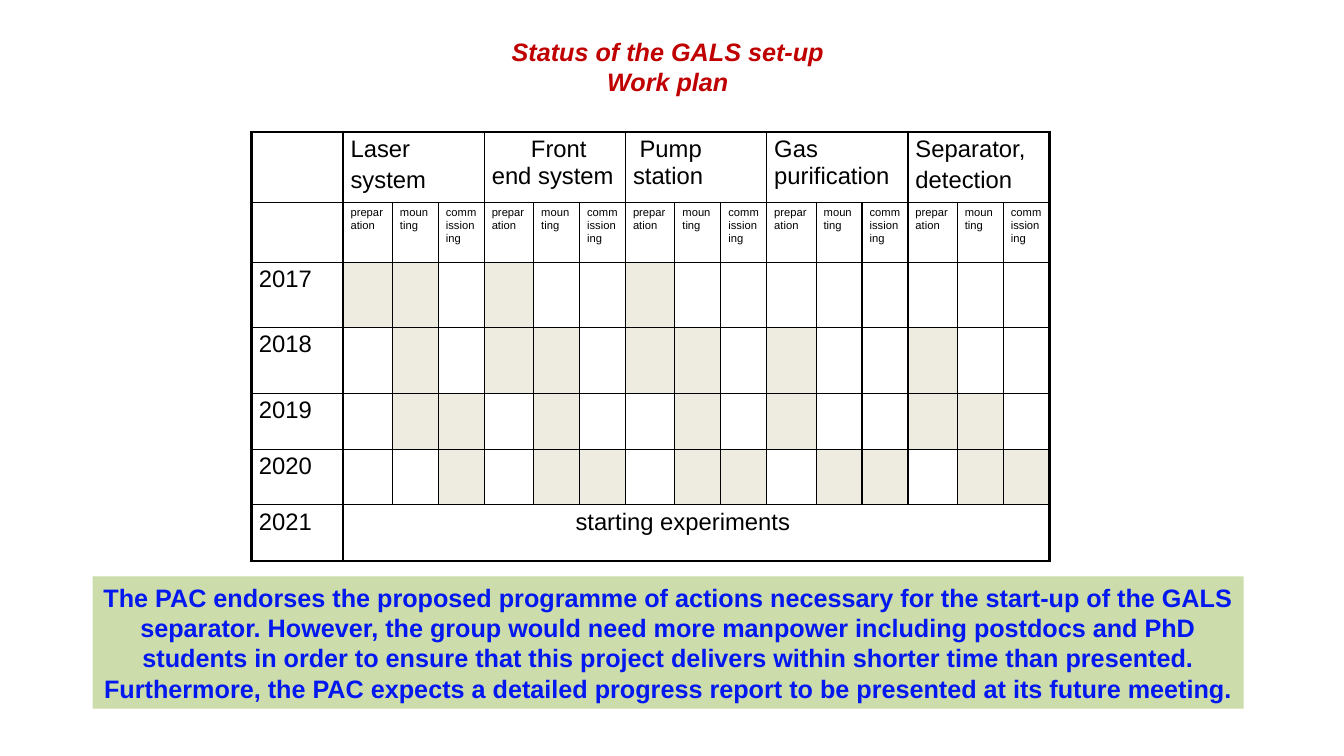
from dataclasses import dataclass

from lxml import etree
from pptx import Presentation
from pptx.dml.color import RGBColor
from pptx.enum import shapes, text
from pptx.oxml import ns
from pptx.util import Pt

BLACK = RGBColor(0x00, 0x00, 0x00)
RED = RGBColor(0xC0, 0x00, 0x00)
BLUE = RGBColor(0x02, 0x18, 0xEE)
GREEN = RGBColor(0x9B, 0xBB, 0x59)
BEIGE = RGBColor(0xEE, 0xEC, 0xE1)

THIN, THICK = 1, 2.25
STEPS = ("preparation", "mounting", "commissioning")
HEIGHTS = (50.6, 42.6, 46.5, 47, 40, 39.6, 40.2)


@dataclass
class Task:
    lines: tuple[str, ...]
    indent: float = 0


@dataclass
class Year:
    name: str
    plan: str  # one mark per step, "x" where work is planned


TASKS = (
    Task(("Laser", "system")),
    Task(("Front end system",), 28),
    Task(("Pump station",), 4.7),
    Task(("Gas purification",)),
    Task(("Separator,", "detection")),
)
YEARS = (
    Year("2017", "xx. x.. x.. ... ..."),
    Year("2018", ".x. xx. xx. x.. x.."),
    Year("2019", ".xx .x. .x. x.. xx."),
    Year("2020", "..x .xx .xx .xx .xx"),
)
WIDTHS = (65.4,) + (35.3, 32.8, 32.8) * len(TASKS)
ROWS, COLS = len(HEIGHTS), len(WIDTHS)


def style(par, size: float, color: RGBColor, bold: bool = False, slant: bool = False) -> None:
    font = par.font
    font.name, font.size, font.bold, font.italic = "Arial", Pt(size), bold, slant
    font.color.rgb = color


def border(cell, row: int, col: int, span: int) -> None:
    """Draw thick lines on the rim of the table and thin ones inside."""
    rims = {"L": col == 0, "R": col + span == COLS, "T": row == 0, "B": row == ROWS - 1}
    props = cell._tc.get_or_add_tcPr()
    for side, rim in rims.items():
        line = etree.SubElement(props, ns.qn(f"a:ln{side}"), w=str(Pt(THICK if rim else THIN)))
        fill = etree.SubElement(line, ns.qn("a:solidFill"))
        etree.SubElement(fill, ns.qn("a:srgbClr"), val=str(BLACK))


def write(cell, lines: tuple[str, ...], size: float = 17, indent: float = 0) -> None:
    cell.text = "\n".join(lines)
    for num, par in enumerate(cell.text_frame.paragraphs):
        if num:
            par.space_before = Pt(size * 0.2)
        if indent:
            props = par._p.get_or_add_pPr()
            props.set("marL", "0")
            props.set("indent", str(Pt(indent)))
        style(par, size, BLACK)


def add_title(slide) -> None:
    box = slide.shapes.add_textbox(Pt(0.7), Pt(22.3), Pt(952.6), Pt(51))
    frame = box.text_frame
    frame.word_wrap = True
    frame.text = "Status of the GALS set-up\nWork plan"
    for par in frame.paragraphs:
        par.alignment = text.PP_ALIGN.CENTER
        style(par, 18, RED, bold=True, slant=True)


def add_plan(slide) -> None:
    frame = slide.shapes.add_table(ROWS, COLS, Pt(179.6), Pt(94.3), Pt(sum(WIDTHS)), Pt(sum(HEIGHTS)))
    table = frame.table
    table.first_row = table.horz_banding = False
    for col, width in zip(table.columns, WIDTHS):
        col.width = Pt(width)
    for row, height in zip(table.rows, HEIGHTS):
        row.height = Pt(height)

    spans = {(0, 1 + 3 * num): 3 for num in range(len(TASKS))}
    spans[ROWS - 1, 1] = COLS - 1
    for (row, col), span in spans.items():
        table.cell(row, col).merge(table.cell(row, col + span - 1))

    for row in range(ROWS):
        for col in range(COLS):
            cell = table.cell(row, col)
            cell.margin_left = cell.margin_right = Pt(5.4)
            cell.margin_top = cell.margin_bottom = Pt(2.7)
            border(cell, row, col, spans.get((row, col), 1))
            cell.fill.background()

    for num, task in enumerate(TASKS):
        start = 1 + 3 * num
        write(table.cell(0, start), task.lines, indent=task.indent)
        for col, step in enumerate(STEPS, start):
            write(table.cell(1, col), (step,), size=8)
    for row, year in enumerate(YEARS, 2):
        write(table.cell(row, 0), (year.name,))
        for col, mark in enumerate(year.plan.replace(" ", ""), 1):
            if mark == "x":
                fill = table.cell(row, col).fill
                fill.solid()
                fill.fore_color.rgb = BEIGE
    write(table.cell(ROWS - 1, 0), ("2021",))
    write(table.cell(ROWS - 1, 1), ("starting experiments",), indent=160.7)


def add_note(slide) -> None:
    box = slide.shapes.add_shape(shapes.MSO_SHAPE.RECTANGLE, Pt(66.2), Pt(411.8), Pt(822.2), Pt(94.5))
    box.shadow.inherit = False
    box.line.fill.background()
    box.fill.solid()
    box.fill.fore_color.rgb = GREEN
    color = box._element.spPr.find(".//" + ns.qn("a:srgbClr"))
    etree.SubElement(color, ns.qn("a:alpha"), val="50000")
    frame = box.text_frame
    frame.word_wrap = True
    frame.text = (
        "The PAC endorses the proposed programme of actions necessary for the start-up "
        "of the GALS separator. However, the group would need more manpower including "
        "postdocs and PhD students in order to ensure that this project delivers within "
        "shorter time than presented. Furthermore, the PAC expects a detailed progress "
        "report to be presented at its future meeting."
    )
    par = frame.paragraphs[0]
    par.alignment = text.PP_ALIGN.CENTER
    style(par, 18, BLUE, bold=True)


def main() -> None:
    deck = Presentation()
    deck.slide_width, deck.slide_height = Pt(960), Pt(540)
    slide = deck.slides.add_slide(deck.slide_layouts[6])
    add_title(slide)
    add_note(slide)
    add_plan(slide)
    deck.save("out.pptx")


if __name__ == "__main__":
    main()
